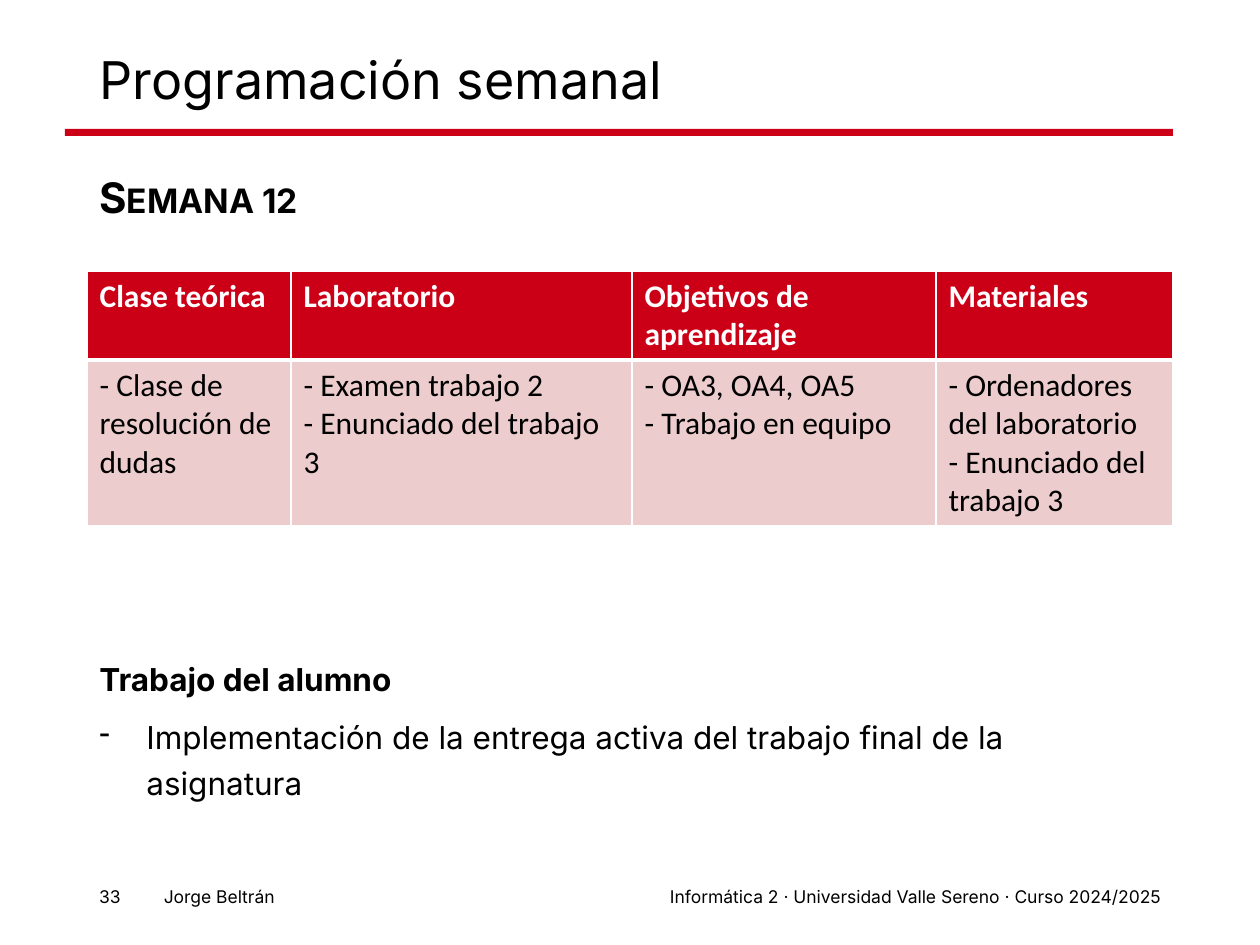
import pptx
import pptx.util
import pptx.dml.color
import pptx.enum.shapes
import pptx.enum.text
import pptx.oxml
import pptx.oxml.ns
import lxml.etree

EMU_PER_PX = 914400 / 126
RED, PINK, WHITE, BLACK = "CB0017", "ECCCCC", "FFFFFF", "000000"
BODY_FONT, TABLE_FONT = "Inter", "Calibri"
ALIGN = pptx.enum.text.PP_ALIGN
LEFT, WIDTH = 87, 1086

COLUMN_WIDTHS = [204, 341, 304, 237]
ROW_HEIGHTS = [89, 166]
SCHEDULE = [
    ["Clase teórica", "Laboratorio", "Objetivos de aprendizaje", "Materiales"],
    [
        "- Clase de resolución de dudas",
        "- Examen trabajo 2\n- Enunciado del trabajo 3",
        "- OA3, OA4, OA5\n- Trabajo en equipo",
        "- Ordenadores del laboratorio\n- Enunciado del trabajo 3",
    ],
]
FOOTERS = [
    ("33", 73, 60),
    ("Jorge Beltrán", 26, 261),
    ("Informática 2 · Universidad Valle Sereno · Curso 2024/2025", 319, 854),
]


def px(length):
    return pptx.util.Emu(round(length * EMU_PER_PX))


def color(hex_string):
    return pptx.dml.color.RGBColor.from_string(hex_string)


def fill_solid(target, hex_string):
    target.fill.solid()
    target.fill.fore_color.rgb = color(hex_string)


def format_paragraph(paragraph, size, font=BODY_FONT, hex_string=BLACK, bold=False,
                     align=ALIGN.LEFT, line_spacing=None, space_before=None):
    paragraph.alignment = align
    if line_spacing:
        paragraph.line_spacing = line_spacing
    if space_before is not None:
        paragraph.space_before = pptx.util.Pt(space_before)
    for run in paragraph.runs:
        run.font.size = pptx.util.Pt(size)
        run.font.name = font
        run.font.bold = bold
        run.font.color.rgb = color(hex_string)


def add_text(slide, text, left, top, width, height):
    shape = slide.shapes.add_textbox(px(left), px(top), px(width), px(height))
    shape.text_frame.word_wrap = True
    shape.text_frame.text = text
    return shape


def add_title(slide, text):
    title = slide.shapes.title
    title.left, title.top, title.width, title.height = px(LEFT), px(50), px(WIDTH), px(66)
    frame = title.text_frame
    frame.text = text
    frame.vertical_anchor = pptx.enum.text.MSO_ANCHOR.MIDDLE
    format_paragraph(frame.paragraphs[0], 29.7, line_spacing=0.9)


def add_rule(slide):
    rule = slide.shapes.add_shape(pptx.enum.shapes.MSO_SHAPE.RECTANGLE,
                                  px(65), px(129), px(1108), px(7))
    rule.shadow.inherit = False
    fill_solid(rule, RED)
    rule.line.fill.background()


def add_heading(slide, text):
    heading = add_text(slide, text, LEFT, 155, WIDTH, 86)
    format_paragraph(heading.text_frame.paragraphs[0], 24, bold=True,
                     line_spacing=1.2, space_before=7.5)
    for properties in heading.element.iter(pptx.oxml.ns.qn("a:rPr")):
        properties.set("cap", "small")


def border_cell(properties, widths):
    for position, (side, points) in enumerate(widths.items()):
        line = pptx.oxml.parse_xml(
            f'<a:ln{side} {pptx.oxml.ns.nsdecls("a")} w="{pptx.util.Pt(points)}">'
            f'<a:solidFill><a:srgbClr val="{WHITE}"/></a:solidFill></a:ln{side}>')
        properties.insert(position, line)


def add_schedule(slide):
    frame = slide.shapes.add_table(len(SCHEDULE), len(COLUMN_WIDTHS), px(LEFT), px(271),
                                   px(sum(COLUMN_WIDTHS)), px(sum(ROW_HEIGHTS)))
    table = frame.table
    for column, width in zip(table.columns, COLUMN_WIDTHS):
        column.width = px(width)
    for row, height, texts in zip(table.rows, ROW_HEIGHTS, SCHEDULE):
        row.height = px(height)
        header = texts is SCHEDULE[0]
        for cell, text in zip(row.cells, texts):
            cell.text_frame.text = text
            fill_solid(cell, RED if header else PINK)
            for paragraph in cell.text_frame.paragraphs:
                format_paragraph(paragraph, 18, TABLE_FONT, WHITE if header else BLACK, header)

    # White grid, thicker between the header and the body
    for index, properties in enumerate(frame.element.iter(pptx.oxml.ns.qn("a:tcPr"))):
        header = index < len(COLUMN_WIDTHS)
        border_cell(properties, {"L": 1, "R": 1, "T": 1 if header else 3, "B": 3 if header else 1})


def add_student_work(slide, heading, task):
    box = add_text(slide, f"{heading}\n{task}", LEFT, 646, WIDTH, 214)
    for paragraph, bold in zip(box.text_frame.paragraphs, (True, False)):
        format_paragraph(paragraph, 18, bold=bold, line_spacing=1.2, space_before=7.5)

    # Hanging dash on the task
    properties = list(box.element.iter(pptx.oxml.ns.qn("a:pPr")))[-1]
    properties.set("marL", str(px(47)))
    properties.set("indent", str(-px(47)))
    bullet = lxml.etree.SubElement(properties, pptx.oxml.ns.qn("a:buChar"))
    bullet.set("char", "-")


def add_footers(slide):
    for text, left, width in FOOTERS:
        footer = add_text(slide, text, left, 880, width, 34)
        format_paragraph(footer.text_frame.paragraphs[0], 10, align=ALIGN.RIGHT)


def main():
    presentation = pptx.Presentation()
    presentation.slide_width, presentation.slide_height = px(1260), px(945)
    slide = presentation.slides.add_slide(presentation.slide_layouts[5])

    # Frame of the slide
    add_rule(slide)
    add_footers(slide)

    # Content
    add_title(slide, "Programación semanal")
    add_heading(slide, "Semana 12")
    add_schedule(slide)
    add_student_work(slide, "Trabajo del alumno",
                     "Implementación de la entrega activa del trabajo final de la asignatura")
    presentation.save("out.pptx")


if __name__ == "__main__":
    main()
